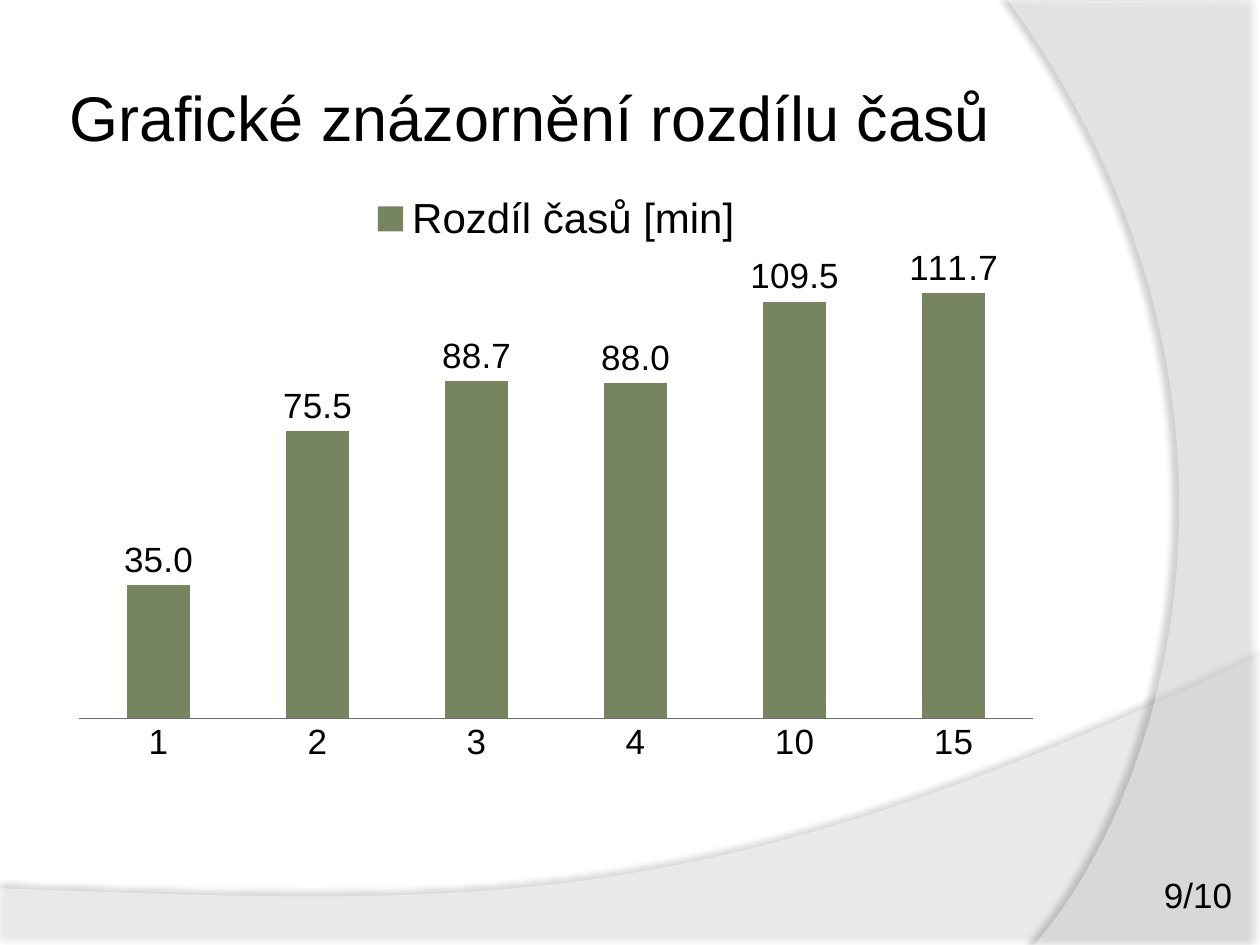
from lxml.etree import SubElement
from pptx import Presentation
from pptx.chart.data import CategoryChartData
from pptx.dml.color import RGBColor
from pptx.enum.chart import XL_CHART_TYPE, XL_LABEL_POSITION, XL_LEGEND_POSITION, XL_TICK_LABEL_POSITION, XL_TICK_MARK
from pptx.enum.text import MSO_ANCHOR, PP_ALIGN
from pptx.oxml import parse_xml
from pptx.oxml.ns import nsdecls, qn
from pptx.util import Pt

FONT = "Arial"
BLACK = "000000"
WHITE = "FFFFFF"
GREEN = "768560"
DIFFERENCES = {"1": 35, "2": 75.5, "3": 88.7, "4": 88, "10": 109.5, "15": 111.7}


def color(hex_code):
    return RGBColor.from_string(hex_code)


def set_font(font, size):
    font.name, font.size, font.bold = FONT, Pt(size), False
    font.color.rgb = color(BLACK)


def curve(p0, p1, p2, p3, steps=60):
    """Points along a cubic Bezier curve, without its start point."""
    points = []
    for i in range(1, steps + 1):
        t = i / steps
        weights = ((1 - t) ** 3, 3 * t * (1 - t) ** 2, 3 * t * t * (1 - t), t ** 3)
        points.append(tuple(sum(w * p[axis] for w, p in zip(weights, (p0, p1, p2, p3)))
                            for axis in (0, 1)))
    return points


def add_wave(s, points, opacity, shadow_opacity, distance, direction):
    """Translucent white area with a soft shadow along its curved edge."""
    (x, y), *rest = [(Pt(px), Pt(py)) for px, py in points]
    builder = s.shapes.build_freeform(x, y)
    builder.add_line_segments(rest, close=True)
    sp = builder.convert_to_shape()
    sp.fill.solid()
    sp.fill.fore_color.rgb = color(WHITE)
    sp.line.fill.background()
    srgb = sp._element.spPr.find(".//" + qn("a:srgbClr"))
    SubElement(srgb, qn("a:alpha"), val=str(opacity * 1000))
    sp._element.spPr.append(parse_xml(
        f'<a:effectLst {nsdecls("a")}><a:outerShdw blurRad="{Pt(4)}" dist="{Pt(distance)}" '
        f'dir="{direction * 60000}" algn="ctr" rotWithShape="0"><a:srgbClr val="{BLACK}">'
        f'<a:alpha val="{shadow_opacity * 1000}"/></a:srgbClr></a:outerShdw></a:effectLst>'))


def add_text(s, text, box, size, inset, anchor=MSO_ANCHOR.TOP, align=PP_ALIGN.LEFT):
    tf = s.shapes.add_textbox(*map(Pt, box)).text_frame
    tf.word_wrap = True
    tf.vertical_anchor = anchor
    tf.margin_left = tf.margin_right = Pt(inset)
    tf.margin_top = tf.margin_bottom = Pt(3.6)
    p = tf.paragraphs[0]
    p.text, p.alignment = text, align
    set_font(p.font, size)


def set_plot_layout(chart, **fractions):
    """Place the inner plot area by fractions of the chart."""
    plot_area = chart._chartSpace.chart.plotArea
    for old in plot_area.findall(qn("c:layout")):
        plot_area.remove(old)
    values = "".join(f'<c:{k} val="{v}"/>' for k, v in fractions.items())
    plot_area.insert(0, parse_xml(
        f'<c:layout {nsdecls("c")}><c:manualLayout><c:layoutTarget val="inner"/>'
        f'<c:xMode val="edge"/><c:yMode val="edge"/>{values}</c:manualLayout></c:layout>'))


def add_column_chart(s, name, values, box):
    data = CategoryChartData(number_format="#,##0.0")
    data.categories = list(values)
    data.add_series(name, list(values.values()))
    chart = s.shapes.add_chart(XL_CHART_TYPE.COLUMN_CLUSTERED, *map(Pt, box), data).chart
    set_font(chart.font, 10)
    chart.has_title = False
    chart.has_legend = True
    chart.legend.position = XL_LEGEND_POSITION.TOP
    chart.legend.include_in_layout = False
    set_font(chart.legend.font, 24)

    axis = chart.category_axis
    axis.major_tick_mark = axis.minor_tick_mark = XL_TICK_MARK.NONE
    axis.format.line.color.rgb = color("6E6E6E")
    axis.format.line.width = Pt(0.75)
    set_font(axis.tick_labels.font, 20)
    axis = chart.value_axis
    axis.minimum_scale, axis.maximum_scale = 0, 120
    axis.has_major_gridlines = False
    axis.tick_label_position = XL_TICK_LABEL_POSITION.NONE
    axis.visible = False

    plot = chart.plots[0]
    plot.vary_by_categories = False
    plot.gap_width, plot.overlap = 150, -25
    fill = plot.series[0].format.fill
    fill.solid()
    fill.fore_color.rgb = color(GREEN)
    plot.has_data_labels = True
    labels = plot.data_labels
    labels.show_value = True
    labels.number_format, labels.number_format_is_linked = "#,##0.0", False
    labels.position = XL_LABEL_POSITION.OUTSIDE_END
    set_font(labels.font, 20)
    set_plot_layout(chart, x=0.02, y=0.14, w=0.96, h=0.76)


def main():
    prs = Presentation()
    prs.slide_width, prs.slide_height = Pt(720), Pt(540)
    s = prs.slides.add_slide(prs.slide_layouts[6])
    s.background.fill.solid()
    s.background.fill.fore_color.rgb = color(WHITE)

    bottom_edge = curve((720, 374.4), (402.5, 525), (281.5, 517.7), (0, 507.6))
    add_wave(s, [(0, 540.7), (720, 540.7), (720, 374.4)] + bottom_edge, 45, 35, 3.5, 270)
    right_edge = curve((591, 540), (673, 445.7), (733, 216), (576, 0))
    add_wave(s, [(720, 1.4), (720, 540), (591, 540)] + right_edge, 40, 45, 4, 180)

    add_text(s, "Grafické znázornění rozdílu časů", (36, 21.6, 588, 90), 36, 3.6, MSO_ANCHOR.MIDDLE)
    add_text(s, "9/10", (658, 495.4, 54, 31.5), 20, 7.2)
    add_column_chart(s, "Rozdíl časů [min]", DIFFERENCES, (33.8, 101.5, 568, 343.4))
    prs.save("out.pptx")


if __name__ == "__main__":
    main()
